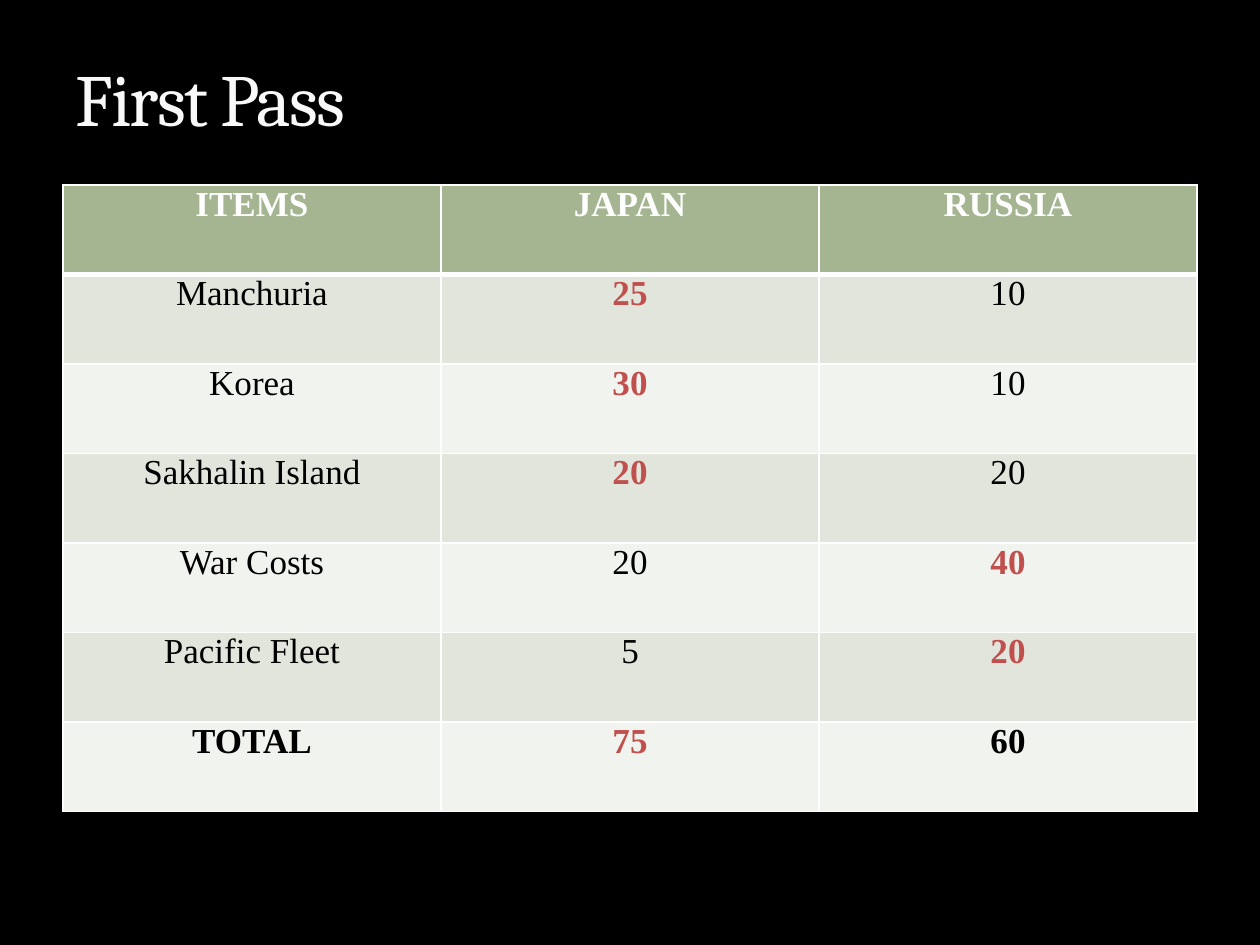
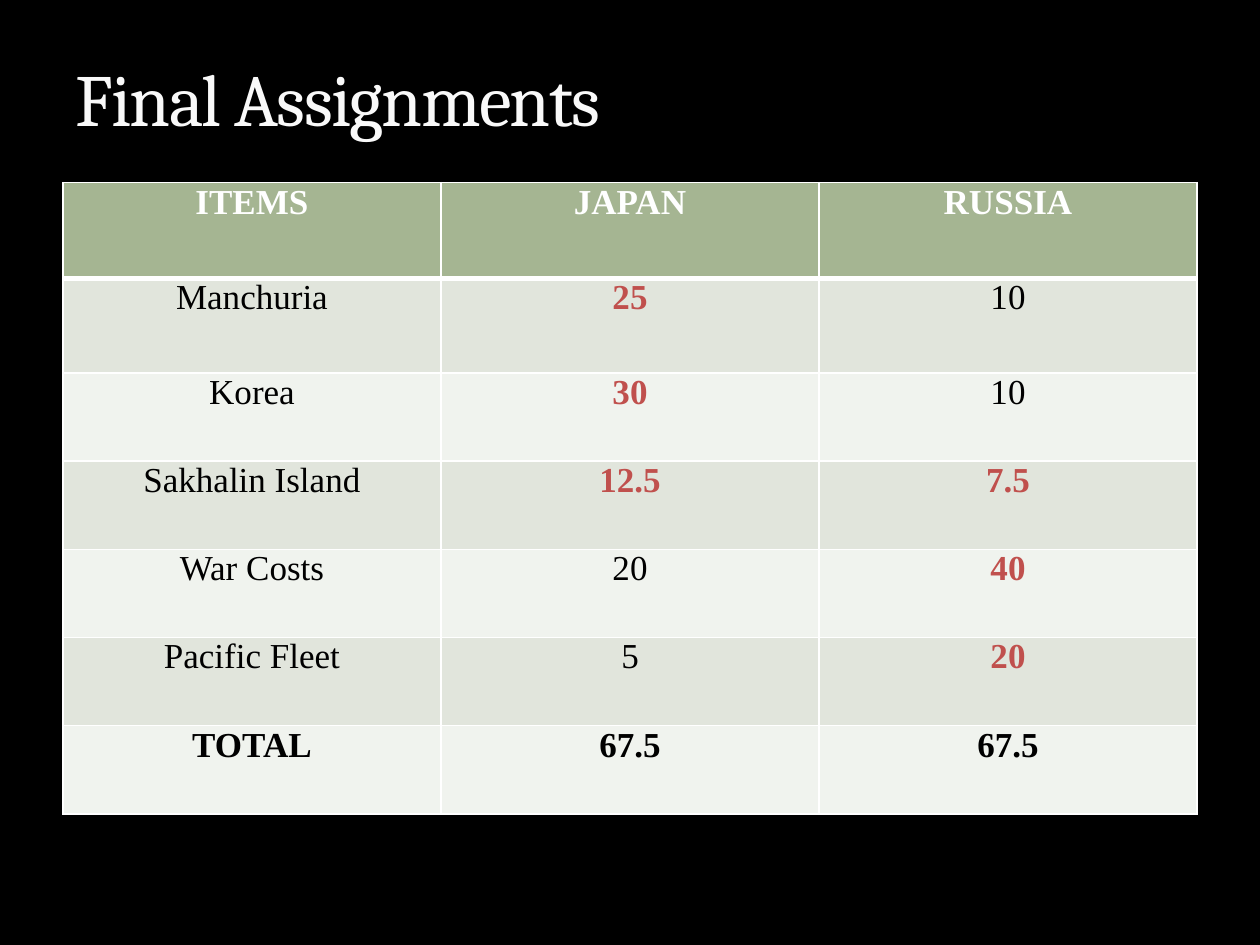
from dataclasses import dataclass
from typing import Any

from lxml.etree import SubElement as Sub
from pptx import Presentation
from pptx.dml.color import RGBColor as Rgb
from pptx.enum.text import MSO_ANCHOR as Anchor, MSO_AUTO_SIZE as Fit, PP_ALIGN as Align
from pptx.oxml.ns import qn
from pptx.util import Pt

SCALE = 9144


def px(size: int) -> int:
    return size * SCALE


@dataclass(frozen=True)
class Theme:
    back: str = "000000"
    title: str = "F9F9F9"
    edge: str = "3C4422"
    rule: str = "FFFFFF"
    head: str = "A5B592"
    bands: tuple[str, str] = ("F0F3EE", "E1E5DC")
    label: str = "FFFFFF"
    text: str = "000000"
    hot: str = "C0504D"
    serif: str = "Cambria"
    roman: str = "Times New Roman"
    big: int = 42
    small: int = 20
    thin: int = 1
    thick: int = 3


@dataclass(frozen=True)
class Row:
    item: str
    japan: str
    russia: str
    hot: tuple[int, ...] = ()
    bold: bool = False


@dataclass(frozen=True)
class Page:
    title: str
    top: int
    tall: tuple[int, ...]
    rows: tuple[Row, ...]


LOOK = Theme()
LEFT, WIDE = 50, 900
HEAD = Row("ITEMS", "JAPAN", "RUSSIA", bold=True)
LANDS = (Row("Manchuria", "25", "10", (1,)), Row("Korea", "30", "10", (1,)))
COSTS = (Row("War Costs", "20", "40", (2,)), Row("Pacific Fleet", "5", "20", (2,)))
PAGES = (
    Page("First Pass", 147, (71,) * 7, (
        HEAD, *LANDS,
        Row("Sakhalin Island", "20", "20", (1,)),
        *COSTS,
        Row("TOTAL", "75", "60", (1,), True))),
    Page("Final Assignments", 145, (76, 75) + (70,) * 5, (
        HEAD, *LANDS,
        Row("Sakhalin Island", "12.5", "7.5", (1, 2)),
        *COSTS,
        Row("TOTAL", "67.5", "67.5", bold=True))),
)


def put(thing: Any, values: dict[str, Any]) -> None:
    for name, value in values.items():
        setattr(thing, name, value)


def style(run: Any, face: str, size: int, hue: str, bold: bool) -> None:
    put(run.font, {"name": face, "size": Pt(size), "bold": bold})
    run.font.color.rgb = Rgb.from_string(hue)


def add_line(props: Any, tag: str, hue: str, width: float) -> Any:
    line = Sub(props, qn(tag), w=str(int(Pt(width))))
    fill = Sub(line, qn("a:solidFill"))
    return Sub(fill, qn("a:srgbClr"), val=hue)


def add_title(slide: Any, text: str) -> None:
    title = slide.shapes.title
    put(title, {"left": px(LEFT), "top": px(17), "width": px(WIDE), "height": px(100)})
    frame = title.text_frame
    put(frame, {"text": text, "vertical_anchor": Anchor.BOTTOM,
                "word_wrap": True, "auto_size": Fit.NONE})
    para = frame.paragraphs[0]
    para.alignment = Align.LEFT
    run = para.runs[0]
    style(run, LOOK.serif, LOOK.big, LOOK.title, False)
    props = run.font._element
    props.set("spc", "-100")
    tint = add_line(props, "a:ln", LOOK.edge, 0.25)
    Sub(tint, qn("a:alpha"), val="75000")
    props.insert(0, props.find(qn("a:ln")))


def fill_cell(cell: Any, text: str, level: int, hue: str, bold: bool) -> None:
    put(cell, {"text": text, "margin_left": px(7), "margin_right": px(7),
               "margin_top": 0, "margin_bottom": 0})
    props = cell._tc.get_or_add_tcPr()
    heavy = {0: "B", 1: "T"}.get(level)
    for side in "LRTB":
        width = LOOK.thick if side == heavy else LOOK.thin
        add_line(props, f"a:ln{side}", LOOK.rule, width)
    cell.fill.solid()
    shade = LOOK.bands[level % 2] if level else LOOK.head
    cell.fill.fore_color.rgb = Rgb.from_string(shade)
    para = cell.text_frame.paragraphs[0]
    para.alignment = Align.CENTER
    style(para.runs[0], LOOK.roman, LOOK.small, hue, bold)


def add_grid(slide: Any, page: Page) -> None:
    frame = slide.shapes.add_table(len(page.rows), 3, px(LEFT), px(page.top),
                                   px(WIDE), px(sum(page.tall)))
    grid = frame.table
    for level, (row, tall) in enumerate(zip(page.rows, page.tall)):
        grid.rows[level].height = px(tall)
        plain = LOOK.text if level else LOOK.label
        for spot, text in enumerate((row.item, row.japan, row.russia)):
            hot = spot in row.hot
            fill_cell(grid.cell(level, spot), text, level,
                      LOOK.hot if hot else plain, hot or row.bold)


def main() -> None:
    deck = Presentation()
    put(deck, {"slide_width": px(1000), "slide_height": px(750)})
    back = deck.slide_master.background.fill
    back.solid()
    back.fore_color.rgb = Rgb.from_string(LOOK.back)
    for page in PAGES:
        slide = deck.slides.add_slide(deck.slide_layouts[5])
        add_title(slide, page.title)
        add_grid(slide, page)
    deck.save("out.pptx")


if __name__ == "__main__":
    main()
